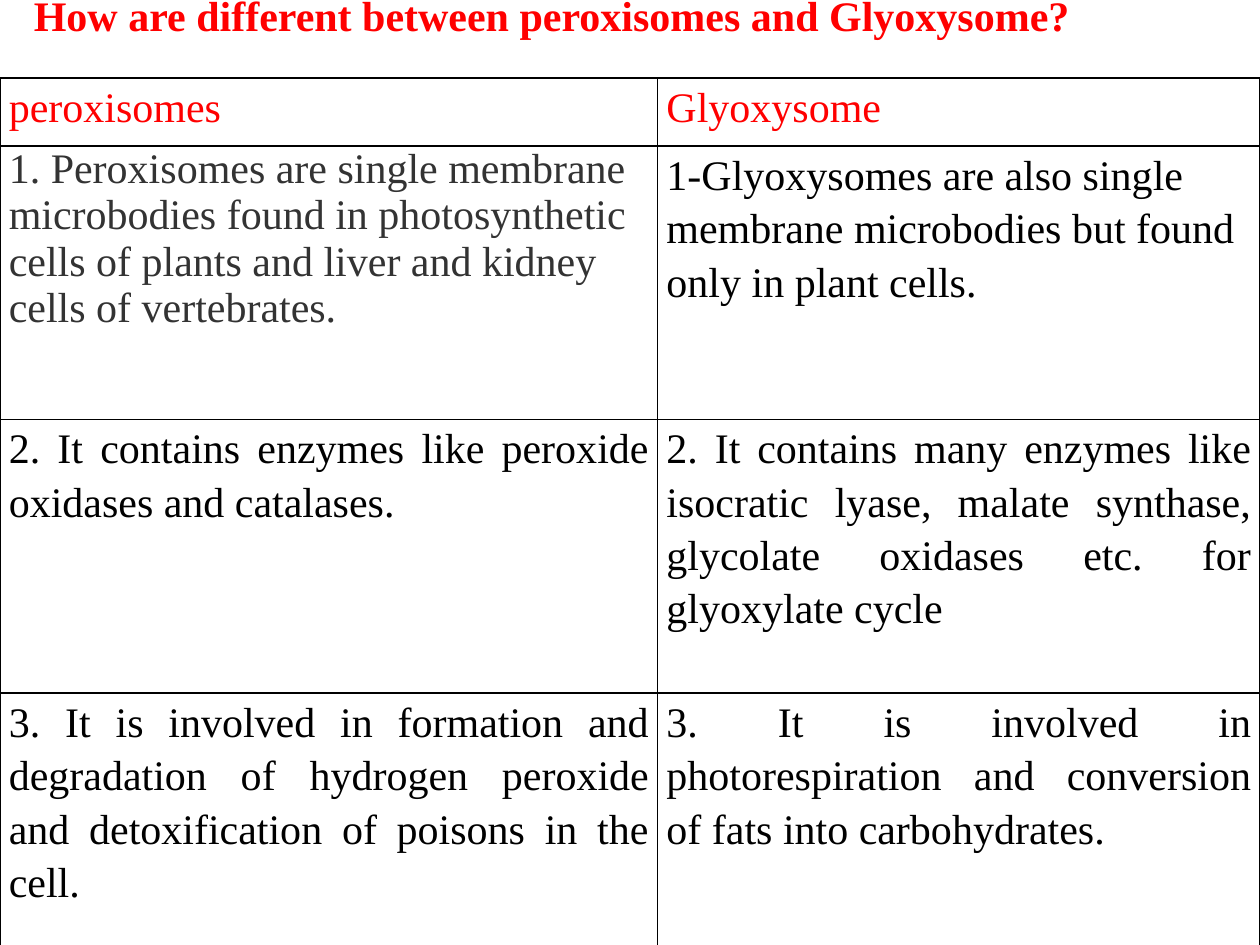
from lxml import etree
from pptx import Presentation
from pptx.dml.color import RGBColor
from pptx.enum.text import MSO_ANCHOR, PP_ALIGN
from pptx.oxml.ns import qn
from pptx.util import Inches, Pt

TOP = MSO_ANCHOR.TOP
LEFT = PP_ALIGN.LEFT
JUSTIFY = PP_ALIGN.JUSTIFY

RED, BLACK, GREY = "FF0000", "000000", "333333"
TITLE = "How are different between peroxisomes and Glyoxysome?"
ROWS = [
    [("peroxisomes", RED, JUSTIFY, 1.15), ("Glyoxysome", RED, JUSTIFY, 1.15)],
    [
        ("1. Peroxisomes are single membrane microbodies found in photosynthetic "
         "cells of plants and liver and kidney cells of vertebrates.", GREY, LEFT, 1.0),
        ("1-Glyoxysomes are also single membrane microbodies but found only in "
         "plant cells.", BLACK, LEFT, 1.15),
    ],
    [
        ("2. It contains enzymes like peroxide oxidases and catalases.",
         BLACK, JUSTIFY, 1.15),
        ("2. It contains many enzymes like isocratic lyase, malate synthase, "
         "glycolate oxidases etc. for glyoxylate cycle", BLACK, JUSTIFY, 1.15),
    ],
    [
        ("3. It is involved in formation and degradation of hydrogen peroxide and "
         "detoxification of poisons in the cell.", BLACK, JUSTIFY, 1.15),
        ("3. It is involved in photorespiration and conversion of fats into "
         "carbohydrates.", BLACK, JUSTIFY, 1.15),
    ],
]
COLUMN_WIDTHS = [5.22, 4.78]
ROW_HEIGHTS = [0.54] + [2.17] * 3


def color(value):
    return RGBColor.from_string(value)


def write(paragraph, text, text_color, bold=False):
    paragraph.text = text
    font = paragraph.font
    font.name, font.size, font.bold = "Times New Roman", Pt(24), bold
    font.color.rgb = color(text_color)


def add_borders(cell):
    properties = cell._tc.get_or_add_tcPr()
    for position, side in enumerate(("a:lnL", "a:lnR", "a:lnT", "a:lnB")):
        line = etree.Element(qn(side), w=str(Pt(1)))
        fill = etree.SubElement(line, qn("a:solidFill"))
        etree.SubElement(fill, qn("a:srgbClr"), val=BLACK)
        properties.insert(position, line)


def fill_cell(cell, text, text_color, alignment, spacing):
    cell.fill.background()
    cell.margin_left = cell.margin_right = Inches(0.07)
    cell.margin_top = cell.margin_bottom = 0
    paragraph = cell.text_frame.paragraphs[0]
    write(paragraph, text, text_color)
    paragraph.alignment = alignment
    paragraph.line_spacing = spacing
    add_borders(cell)


def add_comparison(slide):
    table = slide.shapes.add_table(
        len(ROWS), len(COLUMN_WIDTHS), 0, Inches(0.62),
        Inches(sum(COLUMN_WIDTHS)), Inches(sum(ROW_HEIGHTS))).table
    table.first_row = table.horz_banding = False
    for column, width in zip(table.columns, COLUMN_WIDTHS):
        column.width = Inches(width)
    for row, height, contents in zip(table.rows, ROW_HEIGHTS, ROWS):
        row.height = Inches(height)
        for cell, content in zip(row.cells, contents):
            fill_cell(cell, *content)


def add_title(slide):
    box = slide.shapes.add_textbox(Inches(0.17), Inches(-0.15), Inches(8.59), Inches(0.81))
    frame = box.text_frame
    frame.word_wrap = True
    frame.vertical_anchor = TOP
    frame.margin_top = Inches(0.07)
    write(frame.paragraphs[0], TITLE, RED, bold=True)


def main():
    presentation = Presentation()
    presentation.slide_width, presentation.slide_height = Inches(10), Inches(7.5)
    slide = presentation.slides.add_slide(presentation.slide_layouts[6])
    add_comparison(slide)
    add_title(slide)
    presentation.save("out.pptx")


if __name__ == "__main__":
    main()
